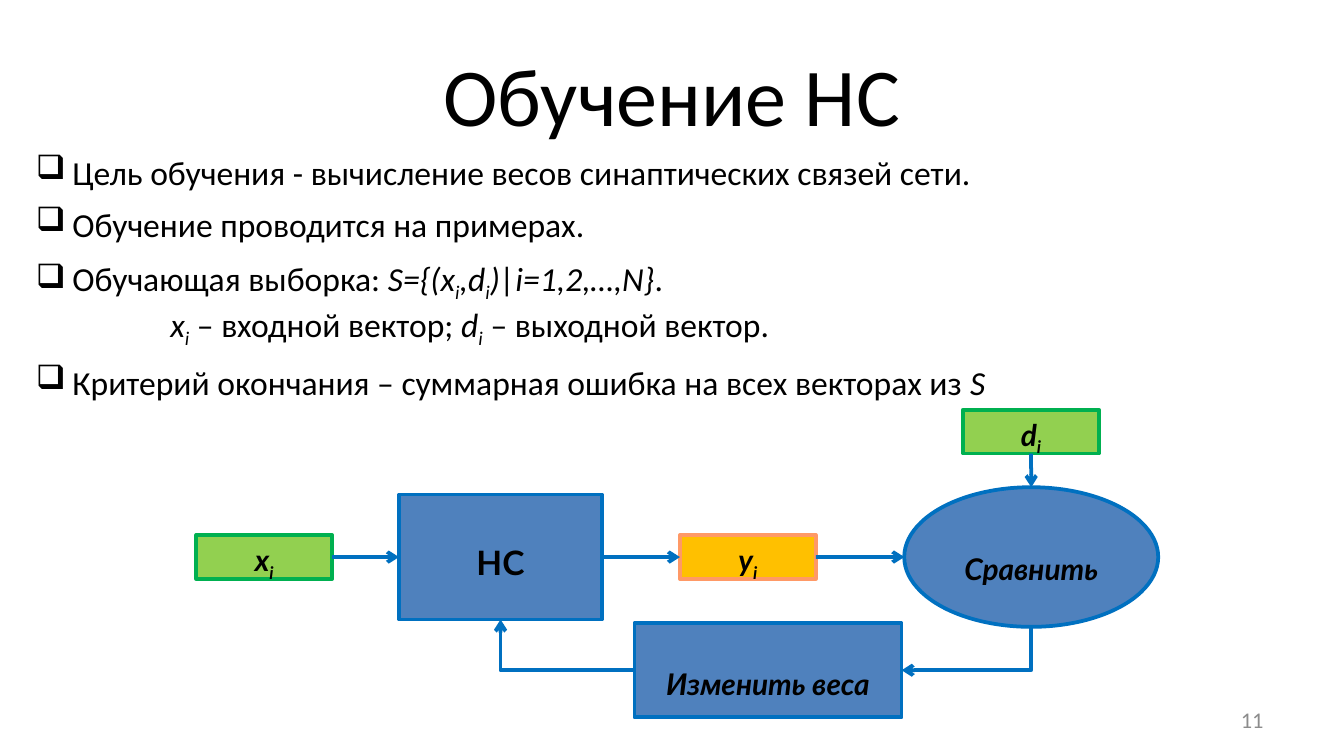
from dataclasses import dataclass
from typing import NamedTuple

from lxml import etree
from pptx import Presentation
from pptx.dml.color import RGBColor
from pptx.enum.shapes import MSO_CONNECTOR, MSO_SHAPE
from pptx.enum.text import MSO_ANCHOR, PP_ALIGN
from pptx.oxml.ns import qn
from pptx.util import Cm, Pt

RECT, OVAL = MSO_SHAPE.RECTANGLE, MSO_SHAPE.OVAL
STRAIGHT, ELBOW = MSO_CONNECTOR.STRAIGHT, MSO_CONNECTOR.ELBOW
CENTER, RIGHT = PP_ALIGN.CENTER, PP_ALIGN.RIGHT
TOP, MIDDLE = MSO_ANCHOR.TOP, MSO_ANCHOR.MIDDLE
TOP_SIDE, LEFT_SIDE, BOTTOM_SIDE, RIGHT_SIDE = range(4)


@dataclass(frozen=True)
class Theme:
    font: str = "Calibri"
    label: str = "Lato"
    black: str = "000000"
    gray: str = "8C8C8C"
    blue: str = "4F81BD"
    edge: str = "0070C0"
    lime: str = "92D050"
    green: str = "00B050"
    amber: str = "FFC000"
    peach: str = "FF9966"
    title: int = 44
    body: int = 18
    small: int = 16
    note: int = 12
    line: int = 2


THEME = Theme()


class Bit(NamedTuple):
    text: str
    italic: bool = False
    sub: bool = False


class Item(NamedTuple):
    bits: list[Bit]
    bullet: bool = True


class Node(NamedTuple):
    """A box in centimetres, placed by its left edge and its middle height."""
    bits: list[Bit]
    left: float
    mid: float
    width: float
    height: float
    fill: str
    edge: str
    kind: int = RECT
    size: int = THEME.small
    inset: float = 0.13


def var(name: str) -> list[Bit]:
    """An italic variable with the index i."""
    return [Bit(name, True), Bit("i", True, True)]


def style(font, name: str, size: int, color: str) -> None:
    font.name = name
    font.size = Pt(size)
    font.color.rgb = RGBColor.from_string(color)


def write(para, bits: list[Bit], name: str, size: int, bold: bool = False) -> None:
    for bit in bits:
        run = para.add_run()
        run.text = bit.text
        style(run.font, name, size, THEME.black)
        run.font.bold = bold
        run.font.italic = bit.italic
        if bit.sub:
            run.font._element.set("baseline", "-25000")


def indent(para, left: float, first: float, mark: str = "") -> None:
    props = para._p.get_or_add_pPr()
    props.set("marL", str(Cm(left)))
    props.set("indent", str(Cm(first)))
    if mark:
        etree.SubElement(props, qn("a:buChar")).set("char", mark)


def draw_node(slide, node: Node):
    shape = slide.shapes.add_shape(
        node.kind, Cm(node.left), Cm(node.mid - node.height / 2),
        Cm(node.width), Cm(node.height))
    shape.shadow.inherit = False
    shape.fill.solid()
    shape.fill.fore_color.rgb = RGBColor.from_string(node.fill)
    shape.line.color.rgb = RGBColor.from_string(node.edge)
    shape.line.width = Pt(THEME.line)
    frame = shape.text_frame
    frame.vertical_anchor = TOP
    frame.margin_top = Cm(node.inset)
    para = frame.paragraphs[0]
    para.alignment = CENTER
    write(para, node.bits, THEME.label, node.size, bold=True)
    return shape


def finish(arrow) -> None:
    """Colour the line, add its head and take its shadow away."""
    arrow.line.color.rgb = RGBColor.from_string(THEME.edge)
    arrow.line.width = Pt(THEME.line)
    props = arrow.element.spPr
    etree.SubElement(props.find(qn("a:ln")), qn("a:tailEnd")).set("type", "arrow")
    etree.SubElement(props, qn("a:effectLst"))


def link(slide, start, out: int, end, into: int) -> None:
    y = start.top + start.height // 2
    arrow = slide.shapes.add_connector(
        STRAIGHT, start.left + start.width, y, end.left, end.top + end.height // 2)
    arrow.begin_connect(start, out)
    # An ellipse numbers its sides differently; only its top matches a rectangle.
    if end.auto_shape_type == RECT or into == TOP_SIDE:
        arrow.end_connect(end, into)
    finish(arrow)


def bend(slide, start: tuple[int, int], end: tuple[int, int], turn: int) -> None:
    """Draw a one-corner arrow: turn 90 goes down then left, 180 left then up."""
    wide, high = abs(end[0] - start[0]), abs(end[1] - start[1])
    if turn == 90:
        wide, high = high, wide
    left = (start[0] + end[0] - wide) // 2
    top = (start[1] + end[1] - high) // 2
    arrow = slide.shapes.add_connector(ELBOW, left, top, left + wide, top + high)
    props = arrow.element.spPr
    props.find(qn("a:xfrm")).set("rot", str(turn * 60000))
    props.find(qn("a:prstGeom")).set("prst", "bentConnector2")
    finish(arrow)


def add_title(slide) -> None:
    title = slide.shapes.title
    title.left, title.top = Cm(1.27), Cm(0.58)
    title.width, title.height = Cm(22.86), Cm(2.39)
    frame = title.text_frame
    frame.text = "Обучение НС"
    frame.vertical_anchor = MIDDLE
    para = frame.paragraphs[0]
    para.alignment = CENTER
    style(para.runs[0].font, THEME.font, THEME.title, THEME.black)


def add_list(slide, items: list[Item]) -> None:
    frame = slide.shapes.add_textbox(Cm(0.43), Cm(2.51), Cm(24.56), Cm(5.03)).text_frame
    frame.word_wrap = True
    for num, item in enumerate(items):
        para = frame.add_paragraph() if num else frame.paragraphs[0]
        if item.bullet:
            para.line_spacing = 1.3
            indent(para, 0.69, -0.69, "❑")
        else:
            indent(para, 2.54, 0)
        write(para, item.bits, THEME.font, THEME.body)


def add_number(slide) -> None:
    frame = slide.shapes.add_textbox(Cm(18.21), Cm(13.23), Cm(5.92), Cm(0.76)).text_frame
    frame.word_wrap = True
    frame.vertical_anchor = MIDDLE
    frame.text = "11"
    para = frame.paragraphs[0]
    para.alignment = RIGHT
    style(para.runs[0].font, THEME.font, THEME.note, THEME.gray)


def add_scheme(slide) -> None:
    t, row = THEME, 10.53
    nodes = [
        Node(var("x"), 3.71, row, 2.57, 0.83, t.lime, t.green),
        Node([Bit("НС")], 7.54, row, 3.84, 2.36, t.blue, t.edge,
             size=t.body, inset=0.89),
        Node(var("y"), 12.85, row, 2.57, 0.83, t.amber, t.peach),
        Node([Bit("Сравнить", True)], 17.09, row, 4.8, 2.64, t.blue, t.edge,
             kind=OVAL, inset=0.81),
        Node(var("d"), 18.2, 8.16, 2.57, 0.83, t.lime, t.green),
        Node([Bit("Изменить веса", True)], 11.99, 12.67, 5.05, 1.78, t.blue, t.edge,
             inset=0.81),
    ]
    source, net, result, test, goal, change = [draw_node(slide, n) for n in nodes]
    for start, end in ((source, net), (net, result), (result, test)):
        link(slide, start, RIGHT_SIDE, end, LEFT_SIDE)
    link(slide, goal, BOTTOM_SIDE, test, TOP_SIDE)
    level = change.top + change.height // 2
    bend(slide, (test.left + test.width // 2, test.top + test.height),
         (change.left + change.width, level), 90)
    bend(slide, (change.left, level),
         (net.left + net.width // 2, net.top + net.height), 180)


def main() -> None:
    deck = Presentation()
    deck.slide_width, deck.slide_height = Cm(25.4), Cm(14.29)
    slide = deck.slides.add_slide(deck.slide_layouts[5])
    add_title(slide)
    add_number(slide)
    add_list(slide, [
        Item([Bit("Цель обучения - вычисление весов синаптических связей сети.")]),
        Item([Bit("Обучение проводится на примерах.")]),
        Item([Bit("Обучающая выборка: "), *var("S={(x"), *var(",d"),
              Bit(")|i=1,2,…,N}", True), Bit(".")]),
        Item([*var("x"), Bit(" – входной вектор; "), *var("d"),
              Bit(" – выходной вектор.")], bullet=False),
        Item([Bit("Критерий окончания – суммарная ошибка на всех векторах из "),
              Bit("S", True)]),
    ])
    add_scheme(slide)
    deck.save("out.pptx")


if __name__ == "__main__":
    main()
